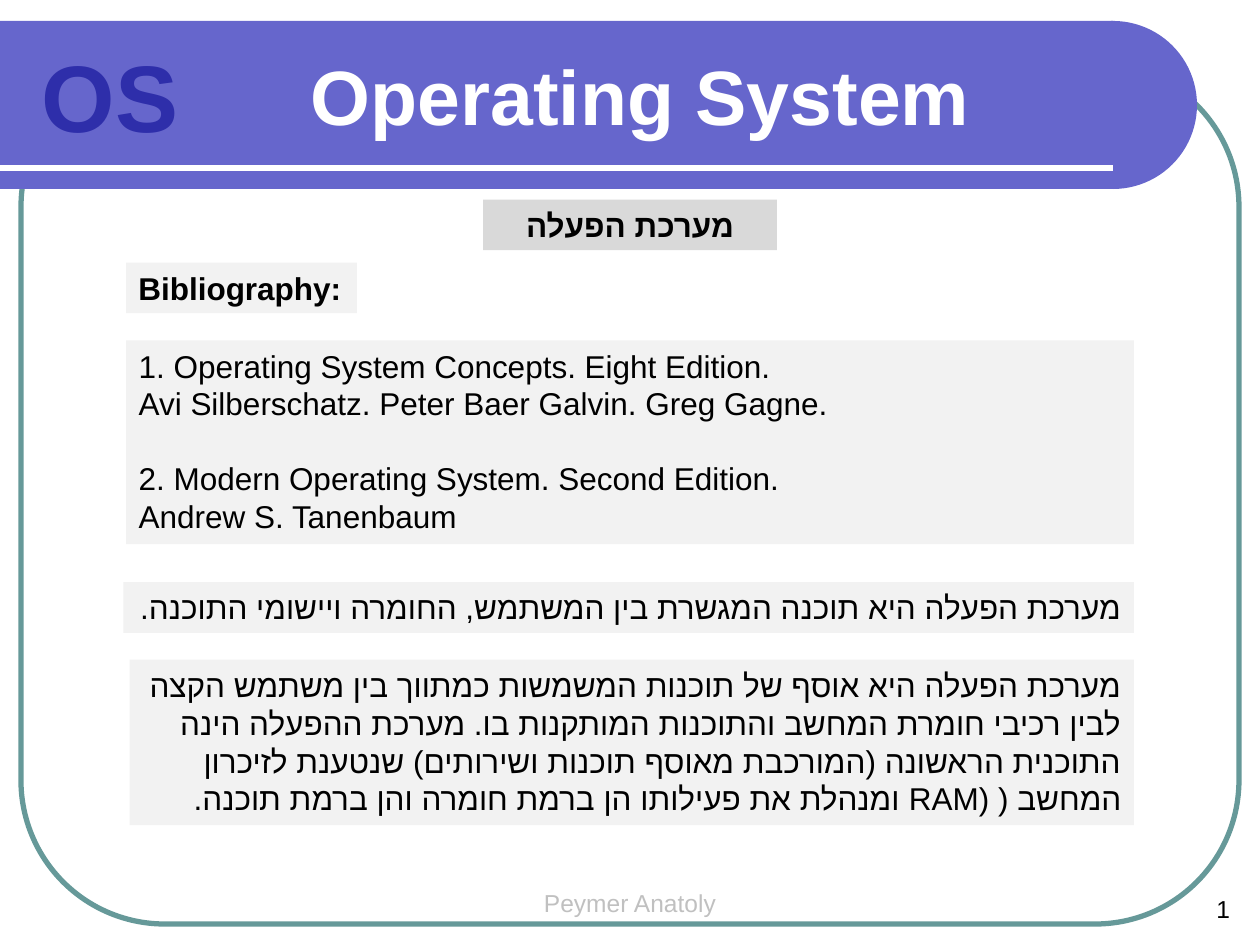
from lxml.etree import SubElement
from pptx import Presentation
from pptx.dml.color import RGBColor
from pptx.enum.shapes import MSO_CONNECTOR as Connector, MSO_SHAPE as Shape
from pptx.enum.text import MSO_ANCHOR as Anchor, MSO_AUTO_SIZE as AutoSize, PP_ALIGN as Align
from pptx.oxml.ns import qn
from pptx.util import Pt

FONT = "Arial"
PALE = "F2F2F2"
PURPLE = "6666CC"


def color(value):
    return RGBColor.from_string(value)


def add_span(para, text, size=18, ink="000000", bold=False):
    span = para.add_run()
    span.text = text
    font = span.font
    font.name, font.size, font.bold = FONT, Pt(size), bold
    font.color.rgb = color(ink)
    SubElement(span._r.get_or_add_rPr(), qn("a:cs"), typeface=FONT)
    return span


def style_para(para, align=Align.LEFT, rtl=False):
    para.alignment = align
    if rtl:
        para._p.get_or_add_pPr().set("rtl", "1")
    return para


def set_place(shape, box):
    shape.left, shape.top, shape.width, shape.height = (Pt(length) for length in box)


def add_shape(page, kind, box, fill=None, line=None):
    shape = page.shapes.add_shape(kind, *(Pt(length) for length in box))
    shape.shadow.inherit = False
    if fill:
        shape.fill.solid()
        shape.fill.fore_color.rgb = color(fill)
    else:
        shape.fill.background()
    if line:
        shape.line.color.rgb = color(line)
        shape.line.width = Pt(3)
    else:
        shape.line.fill.background()
    return shape


def add_label(page, box, text, align=Align.LEFT, rtl=False, size=18,
              ink="000000", bold=False, fill=None, wrap=True):
    if fill:
        frame = add_shape(page, Shape.RECTANGLE, box, fill).text_frame
    else:
        frame = page.shapes.add_textbox(*(Pt(length) for length in box)).text_frame
    frame.word_wrap = wrap
    frame.vertical_anchor = Anchor.TOP
    para = style_para(frame.paragraphs[0], align, rtl)
    return add_span(para, text, size, ink, bold)


def add_frame(page, box):
    frame = add_shape(page, Shape.ROUNDED_RECTANGLE, box, line="669999")
    frame.adjustments[0] = 0.167


def add_header(page, box):
    left, top, width, height = box
    straight = width - height / 2
    add_shape(page, Shape.RECTANGLE, (left, top, straight, height), PURPLE)
    add_shape(page, Shape.OVAL, (left + width - height, top, height, height), PURPLE)
    rule_top = Pt(top + height - 12)
    rule = page.shapes.add_connector(
        Connector.STRAIGHT, Pt(left), rule_top, Pt(left + straight), rule_top)
    rule.line.color.rgb = color("FFFFFF")
    rule.line.width = Pt(3)
    SubElement(rule._element.spPr, qn("a:effectLst"))


def bring_to_front(shape):
    shape.element.getparent().append(shape.element)


def fill_title(title, box):
    set_place(title, box)
    bring_to_front(title)
    frame = title.text_frame
    frame.word_wrap = False
    frame.auto_size = AutoSize.NONE
    frame.vertical_anchor = Anchor.MIDDLE
    para = style_para(frame.paragraphs[0], Align.CENTER, rtl=True)
    add_span(para, "Operating System ", 44, "FFFFFF", True)


def add_monogram(page, box):
    span = add_label(page, box, "OS", Align.CENTER, size=54, bold=True)
    span.font.fill.gradient()
    span.font.fill.gradient_angle = 270
    stops = span._r.rPr.find(qn("a:gradFill")).find(qn("a:gsLst"))
    for stop in list(stops):
        stops.remove(stop)
    for position, value in ((0, "8080DA"), (75, "2E2EAA"), (100, "000097")):
        stop = SubElement(stops, qn("a:gs"), pos=str(position * 1000))
        SubElement(stop, qn("a:srgbClr"), val=value)


def fill_bibliography(body, box):
    set_place(body, box)
    bring_to_front(body)
    body.fill.solid()
    body.fill.fore_color.rgb = color(PALE)
    frame = body.text_frame
    frame.auto_size = AutoSize.NONE
    frame.vertical_anchor = Anchor.TOP
    books = (
        ("1. Operating System Concepts. Eight Edition.",
         "Avi Silberschatz. Peter Baer Galvin. Greg Gagne."),
        ("2. Modern Operating System. Second Edition.",
         "Andrew S. Tanenbaum"),
    )
    for number, (name, authors) in enumerate(books):
        para = frame.add_paragraph() if number else frame.paragraphs[0]
        style_para(para)
        para.space_before = Pt(21 * number)
        properties = para._p.get_or_add_pPr()
        properties.set("marL", "0")
        properties.set("indent", "0")
        SubElement(properties, qn("a:buNone"))
        add_span(para, name)
        para.add_line_break()
        add_span(para, authors)


def add_definitions(page):
    add_label(page, (70.5, 332.7, 577.5, 29),
              "מערכת הפעלה היא תוכנה המגשרת בין המשתמש, החומרה ויישומי התוכנה.",
              Align.RIGHT, rtl=True, fill=PALE)
    add_label(page, (74, 377, 574, 94.5),
              "מערכת הפעלה היא אוסף של תוכנות המשמשות כמתווך בין משתמש הקצה "
              "לבין רכיבי חומרת המחשב והתוכנות המותקנות בו. מערכת ההפעלה הינה "
              "התוכנית הראשונה (המורכבת מאוסף תוכנות ושירותים) שנטענת לזיכרון "
              "המחשב ( (RAM ומנהלת את פעילותו הן ברמת חומרה והן ברמת תוכנה.",
              Align.RIGHT, rtl=True, fill=PALE)


def add_footer(page):
    add_label(page, (294, 504, 132, 25), "Peymer Anatoly", Align.CENTER,
              size=14, ink="C0C0C0")
    number = add_label(page, (662, 507.5, 48, 24), "1", Align.RIGHT, size=14)
    field = number._r
    field.tag = qn("a:fld")
    field.set("id", "{B6F15528-21DE-4FAA-801E-634DDDAF4B2B}")
    field.set("type", "slidenum")


def build_slide(deck):
    page = deck.slides.add_slide(deck.slide_layouts[1])
    title, body = page.placeholders
    add_footer(page)
    add_frame(page, (12, 36, 696, 492))
    add_header(page, (0, 12, 684, 96))
    fill_title(title, (138, 12, 444, 84))
    add_label(page, (276, 114, 168, 29), "מערכת הפעלה", Align.CENTER,
              rtl=True, bold=True, fill="D9D9D9")
    fill_bibliography(body, (72, 194.5, 576, 116.5))
    add_monogram(page, (12, 18, 102, 73))
    add_label(page, (72, 150, 132, 29), "Bibliography:", bold=True,
              fill=PALE, wrap=False)
    add_definitions(page)


def main():
    deck = Presentation()
    deck.slide_width, deck.slide_height = Pt(720), Pt(540)
    build_slide(deck)
    deck.save("out.pptx")


if __name__ == "__main__":
    main()
